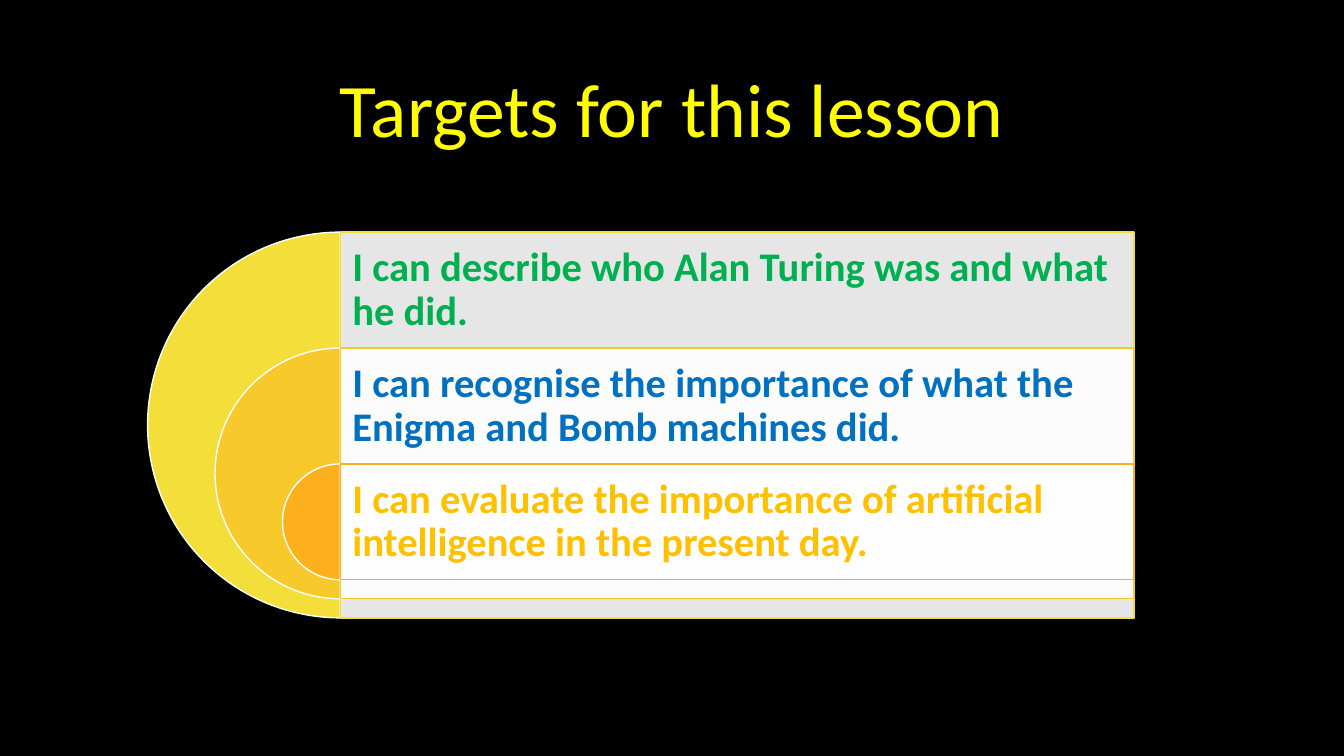
from dataclasses import dataclass

from lxml.etree import SubElement
from pptx import Presentation
from pptx.dml.color import RGBColor as RGB
from pptx.enum.shapes import MSO_SHAPE as SHAPE
from pptx.enum.text import MSO_ANCHOR as ANCHOR, PP_ALIGN as ALIGN
from pptx.oxml.ns import qn
from pptx.shapes.autoshape import Shape
from pptx.shapes.shapetree import GroupShapes
from pptx.text.text import TextFrame
from pptx.util import Cm, Pt


@dataclass(frozen=True)
class Theme:
    font: str = "Calibri"
    background: str = "000000"
    title: str = "FFFF00"
    white: str = "FFFFFF"
    title_size: int = 54
    target_size: int = 29
    line_width: int = 1


@dataclass(frozen=True)
class Target:
    text: str
    text_color: str
    accent: str


THEME = Theme()
TARGETS = [
    Target("I can describe who Alan Turing was and what he did.", "00B050", "F4DE3A"),
    Target("I can recognise the importance of what the Enigma and Bomb machines did.",
           "0070C0", "F8C92B"),
    Target("I can evaluate the importance of artificial intelligence in the present day.",
           "FFC000", "FCB11C"),
]

# Nested layout, in centimetres
AXIS_X, TOP = 8.58, 5.85
PANEL_WIDTH = 20
ROW_HEIGHT = 2.92
DIAMETER, SHRINK = 9.72, 3.4
INSET = Cm(0.3)


def style_text(tf: TextFrame, text: str, size: int, color: str, bold: bool,
               align: ALIGN) -> None:
    tf.text = text
    tf.word_wrap = True
    tf.vertical_anchor = ANCHOR.MIDDLE
    p = tf.paragraphs[0]
    p.alignment = align
    p.line_spacing = 0.9
    p.font.name = THEME.font
    p.font.size = Pt(size)
    p.font.bold = bold
    p.font.color.rgb = RGB.from_string(color)


def add_filled(shapes: GroupShapes, kind: SHAPE, left: float, top: float,
               width: float, height: float, fill: str, line: str) -> Shape:
    s = shapes.add_shape(kind, Cm(left), Cm(top), Cm(width), Cm(height))
    s.shadow.inherit = False
    s.fill.solid()
    s.fill.fore_color.rgb = RGB.from_string(fill)
    s.line.color.rgb = RGB.from_string(line)
    s.line.width = Pt(THEME.line_width)
    return s


def add_target(shapes: GroupShapes, level: int, target: Target) -> None:
    top = TOP + level * ROW_HEIGHT
    size = DIAMETER - level * SHRINK

    # Left half disc, from 90 to 270 degrees
    pie = add_filled(shapes, SHAPE.PIE, AXIS_X - size / 2, top, size, size,
                     target.accent, THEME.white)
    pie.adjustments[0], pie.adjustments[1] = 54, 162

    # Translucent panel
    panel = add_filled(shapes, SHAPE.RECTANGLE, AXIS_X, top, PANEL_WIDTH, size,
                       THEME.white, target.accent)
    color = panel.fill._xPr.find(qn("a:solidFill"))[0]
    SubElement(color, qn("a:alpha"), val="90000")

    # Target wording
    box = shapes.add_textbox(Cm(AXIS_X), Cm(top), Cm(PANEL_WIDTH), Cm(ROW_HEIGHT))
    tf = box.text_frame
    tf.margin_left = tf.margin_right = tf.margin_top = tf.margin_bottom = INSET
    style_text(tf, target.text, THEME.target_size, target.text_color, True, ALIGN.LEFT)


def main() -> None:
    prs = Presentation()
    prs.slide_width, prs.slide_height = Cm(33.87), Cm(19.05)
    slide = prs.slides.add_slide(prs.slide_layouts[5])
    slide.background.fill.solid()
    slide.background.fill.fore_color.rgb = RGB.from_string(THEME.background)

    # Title
    title = slide.shapes.title
    title.left, title.top = Cm(2.33), Cm(1.01)
    title.width, title.height = Cm(29.21), Cm(3.68)
    style_text(title.text_frame, "Targets for this lesson", THEME.title_size,
               THEME.title, False, ALIGN.CENTER)

    # Nested targets
    group = slide.shapes.add_group_shape()
    for level, target in enumerate(TARGETS):
        add_target(group.shapes, level, target)

    prs.save("out.pptx")


if __name__ == "__main__":
    main()
